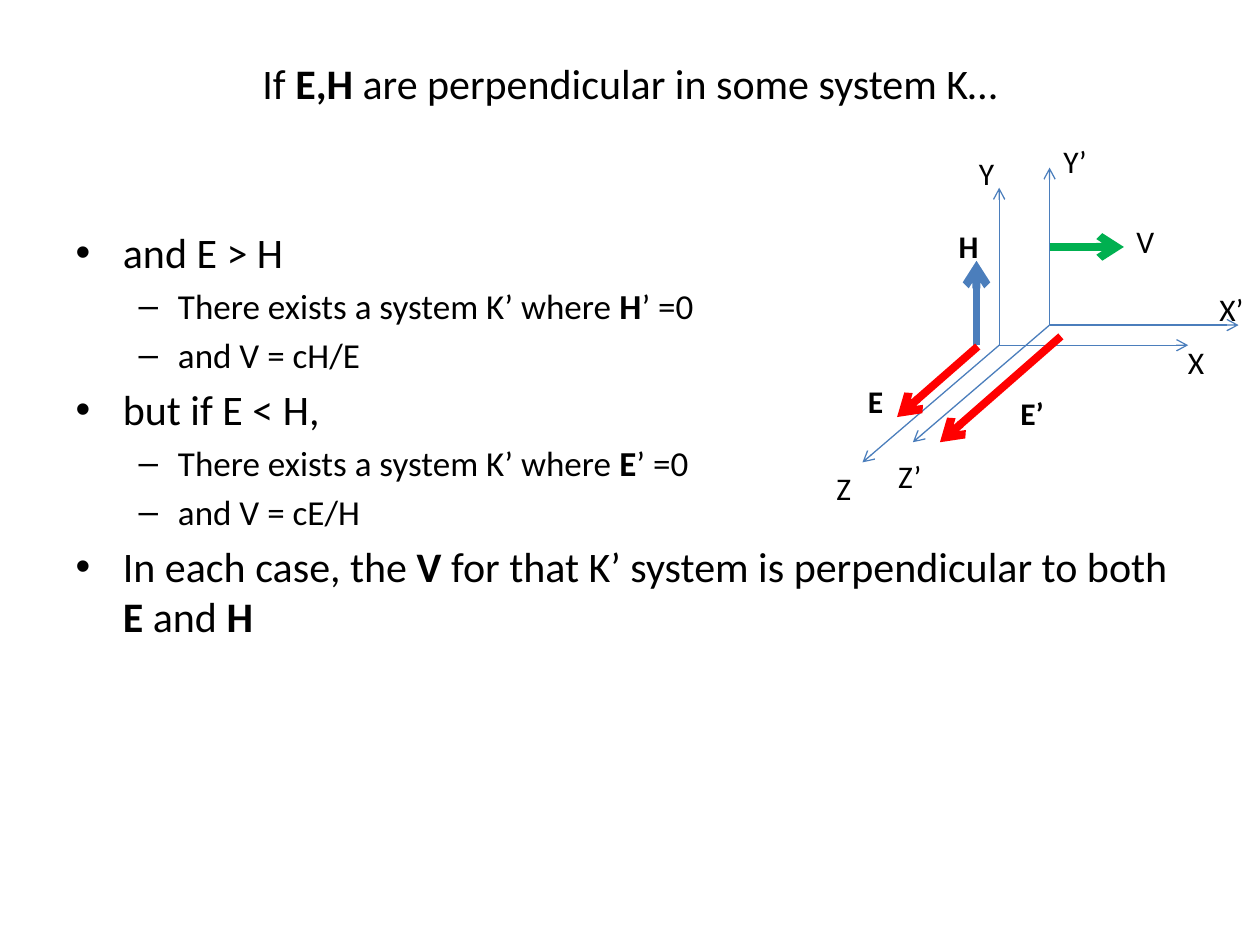
from pptx import Presentation
from pptx.dml.color import RGBColor
from pptx.enum.shapes import MSO_CONNECTOR
from pptx.enum.text import MSO_ANCHOR, MSO_AUTO_SIZE, PP_ALIGN
from pptx.oxml.ns import qn
from pptx.oxml.xmlchemy import OxmlElement
from pptx.util import Inches, Pt

BLACK = RGBColor(0x00, 0x00, 0x00)
BLUE = RGBColor(0x4B, 0x7E, 0xBC)
GREEN = RGBColor(0x00, 0xB0, 0x50)
RED = RGBColor(0xFF, 0x00, 0x00)
STRAIGHT = MSO_CONNECTOR.STRAIGHT
MIDDLE, TOP = MSO_ANCHOR.MIDDLE, MSO_ANCHOR.TOP
CENTER = PP_ALIGN.CENTER
FIXED, GROW = MSO_AUTO_SIZE.NONE, MSO_AUTO_SIZE.SHAPE_TO_FIT_TEXT

COLUMNS, ROWS = 100, 75
AXIS, VECTOR = 0.75, 4.5

# Runs alternate between regular and bold, starting with regular.
TITLE = ["If ", "E,H", " are perpendicular in some system K…"]
BULLETS = [
    (0, ["and E > H"]),
    (1, ["There exists a system K’ where ", "H", "’ =0"]),
    (1, ["and V = cH/E"]),
    (0, ["but if E < H,"]),
    (1, ["There exists a system K’ where ", "E", "’ =0"]),
    (1, ["and V = cE/H"]),
    (0, ["In each case, the ", "V", " for that K’ system is perpendicular to both ",
         "E", " and ", "H"]),
]

ORIGINS = [(79.3, 27.4), (83.3, 25.8)]  # systems K and K’
AXIS_STEPS = [(-10.85, 9.3), (0, -12.5), (15, 0)]  # Z, Y, X
VECTORS = [
    ((77.5, 27.4), (77.5, 20.7), BLUE),   # H
    ((83.3, 19.6), (89.2, 19.6), GREEN),  # V
    ((77.6, 27.5), (71.2, 33.1), RED),    # E
    ((84.2, 26.7), (74.6, 35.1), RED),    # E’
]
LABELS = [
    ("X", 93.3, 26.7, 3.3, False),
    ("Y", 76.7, 11.7, 3.2, False),
    ("Z", 65.4, 36.7, 3.2, False),
    ("X’", 95.8, 22.5, 3.9, False),
    ("Y’", 83.4, 10.8, 3.9, False),
    ("Z’", 70.3, 35.8, 3.9, False),
    ("V", 89.2, 17.1, 3.5, False),
    ("H", 75.1, 17.5, 3.6, True),
    ("E", 67.9, 29.8, 3.2, True),
    ("E’", 80, 30.8, 3.9, True),
]


class SlideBuilder:
    font = "Calibri"
    label_size = 18
    level_sizes = (24, 20)

    def __init__(self, prs):
        self.column = prs.slide_width / COLUMNS
        self.row = prs.slide_height / ROWS
        self.slide = prs.slides.add_slide(prs.slide_layouts[1])

    def point(self, column, row):
        return round(column * self.column), round(row * self.row)

    def place(self, sp, left, top, width, height):
        sp.left, sp.top = self.point(left, top)
        sp.width, sp.height = self.point(width, height)

    def add_run(self, p, text, size, bold):
        r = p.add_run()
        r.text = text
        r.font.name = self.font
        r.font.size = Pt(size)
        r.font.bold = bold
        r.font.color.rgb = BLACK

    def add_runs(self, p, texts, size):
        for i, text in enumerate(texts):
            self.add_run(p, text, size, i % 2 == 1)

    def title(self, texts, *box):
        sp = self.slide.shapes.title
        self.place(sp, *box)
        tf = sp.text_frame
        tf.auto_size, tf.vertical_anchor = FIXED, MIDDLE
        p = tf.paragraphs[0]
        p.alignment = CENTER
        self.add_runs(p, texts, self.level_sizes[0])

    def bullets(self, items, *box):
        sp = self.slide.placeholders[1]
        self.place(sp, *box)
        tf = sp.text_frame
        tf.auto_size, tf.vertical_anchor = FIXED, TOP
        for i, (level, texts) in enumerate(items):
            p = tf.add_paragraph() if i else tf.paragraphs[0]
            p.level = level
            self.add_runs(p, texts, self.level_sizes[level])

    def arrow(self, start, end, color, width):
        line = self.slide.shapes.add_connector(
            STRAIGHT, *self.point(*start), *self.point(*end))
        line.line.color.rgb = color
        line.line.width = Pt(width)
        sp_pr = line.element.spPr
        head = OxmlElement("a:tailEnd")
        head.set("type", "arrow")
        sp_pr.find(qn("a:ln")).append(head)
        sp_pr.append(OxmlElement("a:effectLst"))

    def axes(self, origin):
        for dx, dy in AXIS_STEPS:
            self.arrow(origin, (origin[0] + dx, origin[1] + dy), BLUE, AXIS)

    def label(self, text, left, top, width, bold):
        sp = self.slide.shapes.add_textbox(
            *self.point(left, top), *self.point(width, 4))
        tf = sp.text_frame
        tf.word_wrap, tf.auto_size = False, GROW
        self.add_run(tf.paragraphs[0], text, self.label_size, bold)


def main():
    prs = Presentation()
    prs.slide_width, prs.slide_height = Inches(10), Inches(7.5)
    s = SlideBuilder(prs)
    s.title(TITLE, 5, 3, 90, 7.1)
    s.bullets(BULLETS, 5, 17.5, 90, 49.5)
    for origin in ORIGINS:
        s.axes(origin)
    for start, end, color in VECTORS:
        s.arrow(start, end, color, VECTOR)
    for label in LABELS:
        s.label(*label)
    prs.save("out.pptx")


if __name__ == "__main__":
    main()
